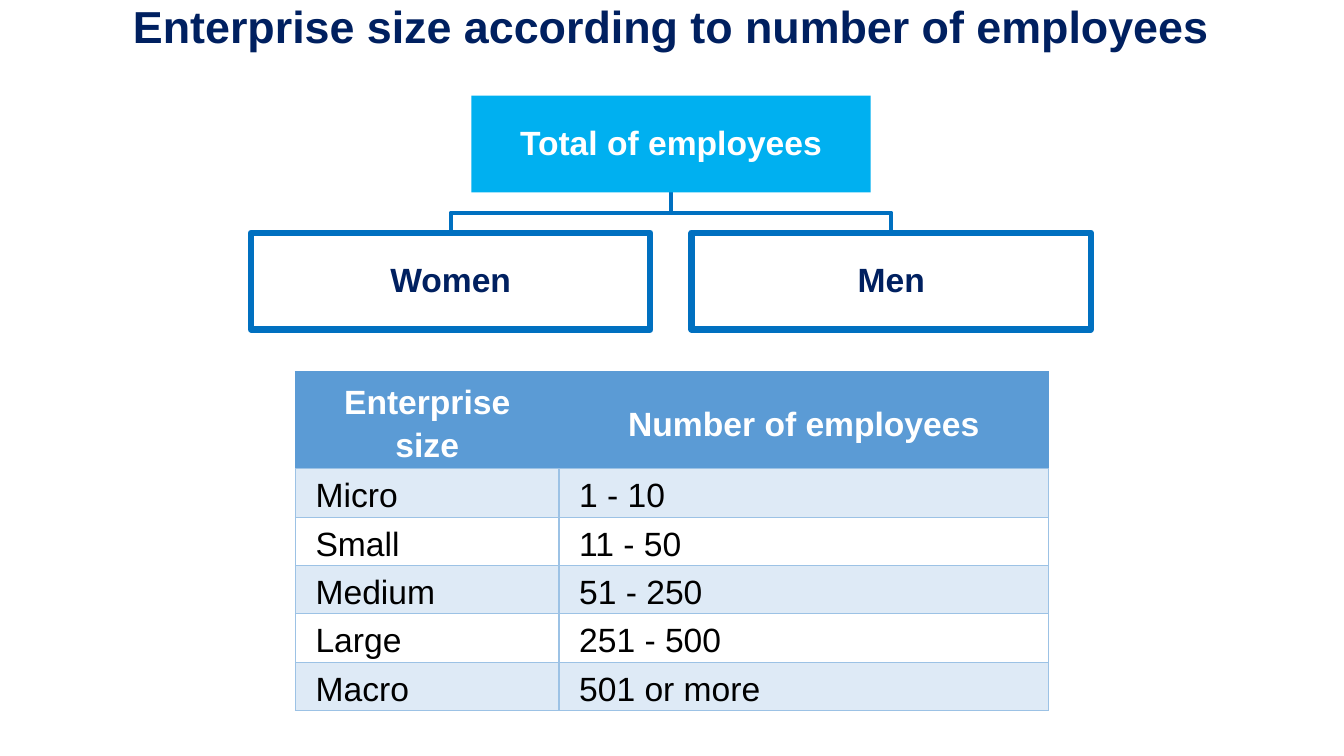
from lxml.etree import SubElement
from pptx import Presentation
from pptx.dml.color import RGBColor
from pptx.enum.shapes import MSO_SHAPE as Shape
from pptx.enum.text import MSO_ANCHOR as Anchor, PP_ALIGN as Align
from pptx.oxml.ns import qn
from pptx.util import Inches, Pt

WHITE = RGBColor(0xFF, 0xFF, 0xFF)
BLACK = RGBColor(0, 0, 0)
NAVY = RGBColor(0x00, 0x20, 0x60)
BLUE = RGBColor(0x00, 0x70, 0xC0)
CYAN = RGBColor(0x00, 0xB0, 0xF0)
HEAD = RGBColor(0x5B, 0x9B, 0xD5)
BAND = RGBColor(0xDE, 0xEA, 0xF6)
EDGE = RGBColor(0x9C, 0xC2, 0xE5)

SIZES = [
    ("Enterprise size", "Number of employees"),
    ("Micro", "1 - 10"),
    ("Small", "11 - 50"),
    ("Medium", "51 - 250"),
    ("Large", "251 - 500"),
    ("Macro", "501 or more"),
]


def assign(item, values):
    for name, value in values.items():
        setattr(item, name, value)


def write(frame, text, color, size=24, bold=True, **para):
    frame.text = text
    line = frame.paragraphs[0]
    assign(line, para)
    font = line.runs[0].font
    assign(font, {"name": "Arial", "size": Pt(size), "bold": bold})
    font.color.rgb = color


def panel(slide, box, fill, edge=None):
    """Add a filled rectangle, outlined if an edge colour is given."""
    rect = slide.shapes.add_shape(Shape.RECTANGLE, *map(Inches, box))
    rect.shadow.inherit = False
    rect.fill.solid()
    rect.fill.fore_color.rgb = fill
    if edge is None:
        rect.line.fill.background()
    else:
        rect.line.color.rgb = edge
        rect.line.width = Pt(4.5)
        SubElement(rect.line._get_or_add_ln(), qn("a:round"))
    rect.text_frame.word_wrap = True
    rect.text_frame.vertical_anchor = Anchor.MIDDLE
    return rect


def title(slide, box, text):
    frame = panel(slide, box, WHITE).text_frame
    write(frame, text, NAVY, 32, alignment=Align.CENTER,
          line_spacing=0.9, space_before=Pt(10))


def branch(slide, start, end):
    """Draw a stepped line that turns halfway down."""
    (x, top), (far, low) = start, end
    mid = (top + low) / 2
    pen = slide.shapes.build_freeform(Inches(x), Inches(top), scale=1)
    turns = [(x, mid), (far, mid), (far, low)]
    pen.add_line_segments([tuple(map(Inches, p)) for p in turns], close=False)
    step = pen.convert_to_shape()
    step.shadow.inherit = False
    step.fill.background()
    step.line.color.rgb = BLUE
    step.line.width = Pt(3)


def chart(slide, box, root, leaves):
    """Place the root over a row of leaves, joined by branches."""
    left, top, width, height = box
    gap = 0.41
    wide = (width - gap * (len(leaves) - 1)) / len(leaves)
    tall = (height - 0.4) / 2
    low = top + height - tall
    mid = left + width / 2
    lefts = [left + i * (wide + gap) for i in range(len(leaves))]
    for x in lefts:
        branch(slide, (mid, top + tall), (x + wide / 2, low))
    nodes = [(root, mid - wide / 2, top, CYAN, None, WHITE)]
    nodes += [(leaf, x, low, WHITE, BLUE, NAVY)
              for leaf, x in zip(leaves, lefts)]
    for text, x, y, fill, edge, ink in nodes:
        frame = panel(slide, (x, y, wide, tall), fill, edge).text_frame
        sides = ("left", "top", "right", "bottom")
        assign(frame, {f"margin_{side}": Inches(0.02) for side in sides})
        write(frame, text, ink, alignment=Align.CENTER, line_spacing=0.9)


def outline(cell, color):
    props = cell._tc.get_or_add_tcPr()
    for side in "LRTB":
        line = SubElement(props, qn(f"a:ln{side}"), w=str(Pt(1)))
        fill = SubElement(line, qn("a:solidFill"))
        SubElement(fill, qn("a:srgbClr"), val=str(color))


def grid(slide, box, rows):
    """Fill a table whose header is two rows tall."""
    left, top, width, height = box
    table = slide.shapes.add_table(len(rows), 2, *map(Inches, box)).table
    assign(table, {"first_row": False, "horz_banding": False})
    for col, share in zip(table.columns, (0.35, 0.65)):
        col.width = Inches(width * share)
    unit = height / (len(rows) + 1)
    for r, texts in enumerate(rows):
        head = r == 0
        table.rows[r].height = Inches(unit * (2 if head else 1))
        for c, text in enumerate(texts):
            cell = table.cell(r, c)
            assign(cell, {
                "margin_left": Inches(0.2), "margin_right": Inches(0.2),
                "margin_top": Inches(0.03), "margin_bottom": 0,
                "vertical_anchor": Anchor.MIDDLE if head else Anchor.TOP,
            })
            outline(cell, HEAD if head else EDGE)
            if head or r % 2:
                cell.fill.solid()
                cell.fill.fore_color.rgb = HEAD if head else BAND
            else:
                cell.fill.background()
            write(cell.text_frame, text, WHITE if head else BLACK, bold=head,
                  alignment=Align.CENTER if head else Align.LEFT,
                  line_spacing=1.15, space_after=Pt(10))


def main():
    deck = Presentation()
    assign(deck, {"slide_width": Inches(13.33), "slide_height": Inches(7.5)})
    slide = deck.slides.add_slide(deck.slide_layouts[6])
    grid(slide, (2.93, 3.69, 7.47, 3.36), SIZES)
    title(slide, (0, -0.19, 13.32, 0.95),
          "Enterprise size according to number of employees")
    chart(slide, (2.49, 0.95, 8.33, 2.32),
          "Total of employees", ("Women", "Men"))
    deck.save("out.pptx")


if __name__ == "__main__":
    main()
